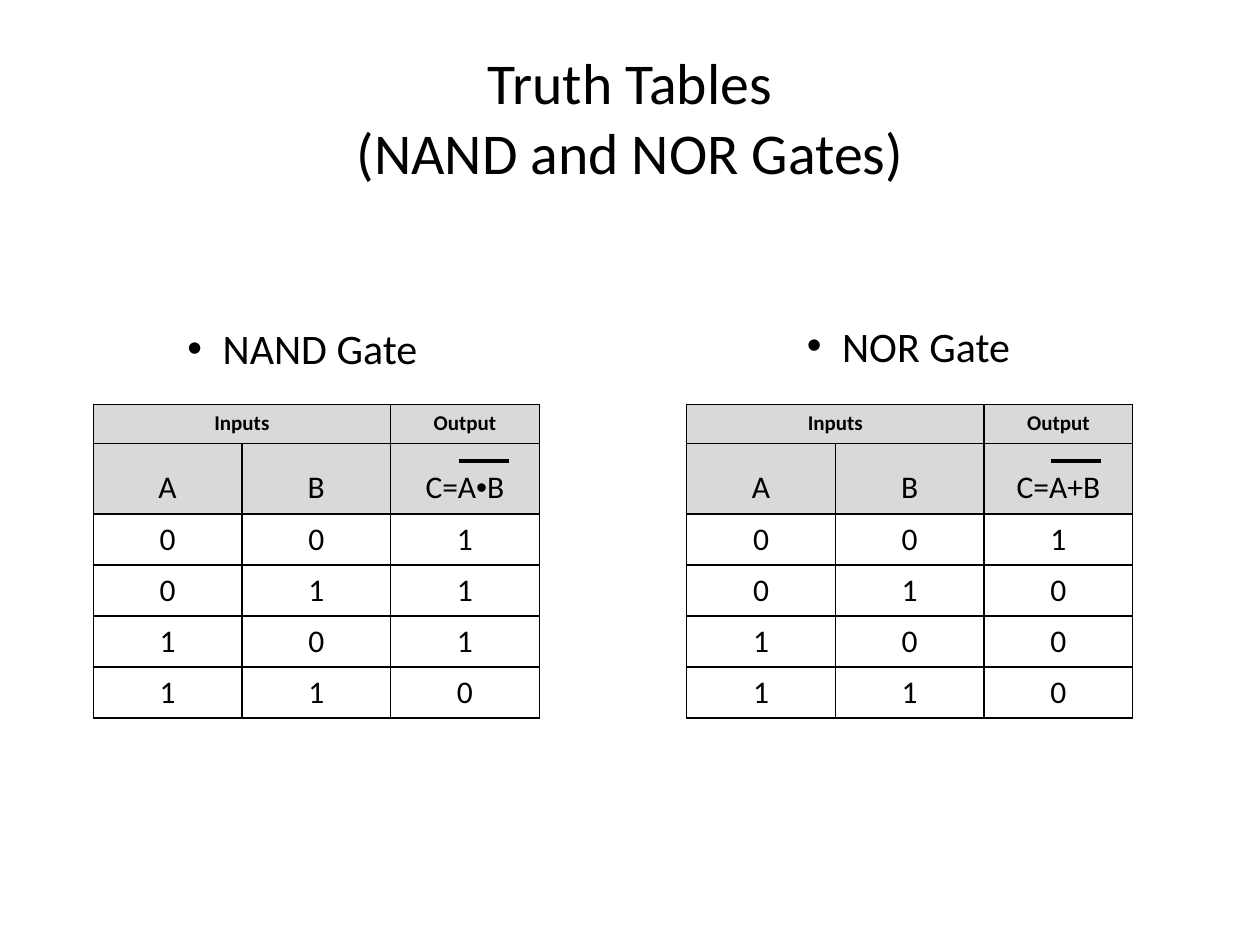
import itertools

import lxml.etree
import pptx
import pptx.dml.color
import pptx.enum.shapes
import pptx.enum.text
import pptx.oxml.ns
import pptx.util

Inches = pptx.util.Inches
Pt = pptx.util.Pt
CENTER = pptx.enum.text.PP_ALIGN.CENTER
MIDDLE = pptx.enum.text.MSO_ANCHOR.MIDDLE
NO_FIT = pptx.enum.text.MSO_AUTO_SIZE.NONE


def color(value):
    return pptx.dml.color.RGBColor.from_string(value)


def add_element(parent, tag, **attributes):
    return lxml.etree.SubElement(parent, pptx.oxml.ns.qn(tag), **attributes)


class GatePage:
    font = "Calibri"
    bullet_font = "Arial"
    ink = "000000"
    header_fill = "D9D9D9"
    column_width = 1.18
    row_heights = [0.31, 0.55, 0.4, 0.4, 0.4, 0.4]

    def __init__(self, deck):
        self.page = deck.slides.add_slide(deck.slide_layouts[3])

    def span(self, para, text, size, bold=False, font=None):
        span = para.add_run()
        span.text = text
        span.font.name = font or self.font
        span.font.size = Pt(size)
        span.font.bold = bold
        span.font.color.rgb = color(self.ink)

    def placeholder(self, index, left, top, width, height):
        """Move a placeholder and return its centred first paragraph."""
        box = self.page.placeholders[index]
        box.left, box.top = Inches(left), Inches(top)
        box.width, box.height = Inches(width), Inches(height)
        box.text_frame.auto_size = NO_FIT
        para = box.text_frame.paragraphs[0]
        para.alignment = CENTER
        para.space_before = Pt(0)
        return para

    def title(self, first, second):
        para = self.placeholder(0, 0.5, 0.3, 9, 1.25)
        self.page.shapes.title.text_frame.vertical_anchor = MIDDLE
        self.span(para, first, 33)
        para.add_line_break()
        self.span(para, second, 33)

    def heading(self, index, text, left, top):
        para = self.placeholder(index, left, top, 4.42, 0.7)
        properties = para._p.get_or_add_pPr()
        properties.set("marL", str(Inches(0.28)))
        properties.set("indent", str(-Inches(0.28)))
        add_element(properties, "a:buFont", typeface=self.bullet_font)
        add_element(properties, "a:buChar", char="•")
        self.span(para, text, 24)

    def borders(self, cell):
        properties = cell._tc.get_or_add_tcPr()
        for position, side in enumerate(("a:lnL", "a:lnR", "a:lnT", "a:lnB")):
            line = add_element(properties, side, w=str(Pt(1)))
            fill = add_element(line, "a:solidFill")
            add_element(fill, "a:srgbClr", val=self.ink)
            properties.insert(position, line)

    def truth_table(self, left, top, formula, gate):
        """Formula is a list of (text, font) pairs; gate maps two bits to one."""
        rows = [["Inputs", "", "Output"], ["A", "B", formula]]
        rows += [[str(a), str(b), str(gate(a, b))]
                 for a, b in itertools.product((0, 1), repeat=2)]
        frame = self.page.shapes.add_table(
            len(rows), 3, Inches(left), Inches(top),
            Inches(3 * self.column_width), Inches(sum(self.row_heights)))
        table = frame.table
        table.first_row = table.horz_banding = False
        for column in table.columns:
            column.width = Inches(self.column_width)
        for row, height in zip(table.rows, self.row_heights):
            row.height = Inches(height)
        for r, values in enumerate(rows):
            for c, value in enumerate(values):
                self.cell(table.cell(r, c), value, r)
        table.cell(0, 0).merge(table.cell(0, 1))

    def cell(self, cell, value, row):
        if row < 2:
            cell.fill.solid()
            cell.fill.fore_color.rgb = color(self.header_fill)
        else:
            cell.fill.background()
        self.borders(cell)
        para = cell.text_frame.paragraphs[0]
        para.alignment = CENTER
        if row == 1:
            para.line_spacing = 1.5
        if not value:
            return
        parts = [(value, self.font)] if isinstance(value, str) else value
        for text, font in parts:
            self.span(para, text, 12 if row == 0 else 18, row == 0, font)

    def overbar(self, left, top, width):
        line = self.page.shapes.add_connector(
            pptx.enum.shapes.MSO_CONNECTOR.STRAIGHT,
            Inches(left), Inches(top), Inches(left + width), Inches(top))
        line.line.color.rgb = color(self.ink)
        line.line.width = Pt(2)
        add_element(line._element.spPr, "a:effectLst")


def main():
    deck = pptx.Presentation()
    deck.slide_width, deck.slide_height = Inches(10), Inches(7.5)
    page = GatePage(deck)
    page.title("Truth Tables", "(NAND and NOR Gates)")

    page.heading(1, "NAND Gate", 0.19, 2.51)
    nand = [("C=A", page.font), ("•", page.bullet_font), ("B", page.font)]
    page.truth_table(0.74, 3.21, nand, lambda a, b: 1 - (a & b))
    page.overbar(3.64, 3.66, 0.4)

    page.heading(2, "NOR Gate", 5, 2.49)
    page.truth_table(5.45, 3.21, "C=A+B", lambda a, b: 1 - (a | b))
    page.overbar(8.34, 3.66, 0.4)

    deck.save("out.pptx")


if __name__ == "__main__":
    main()
